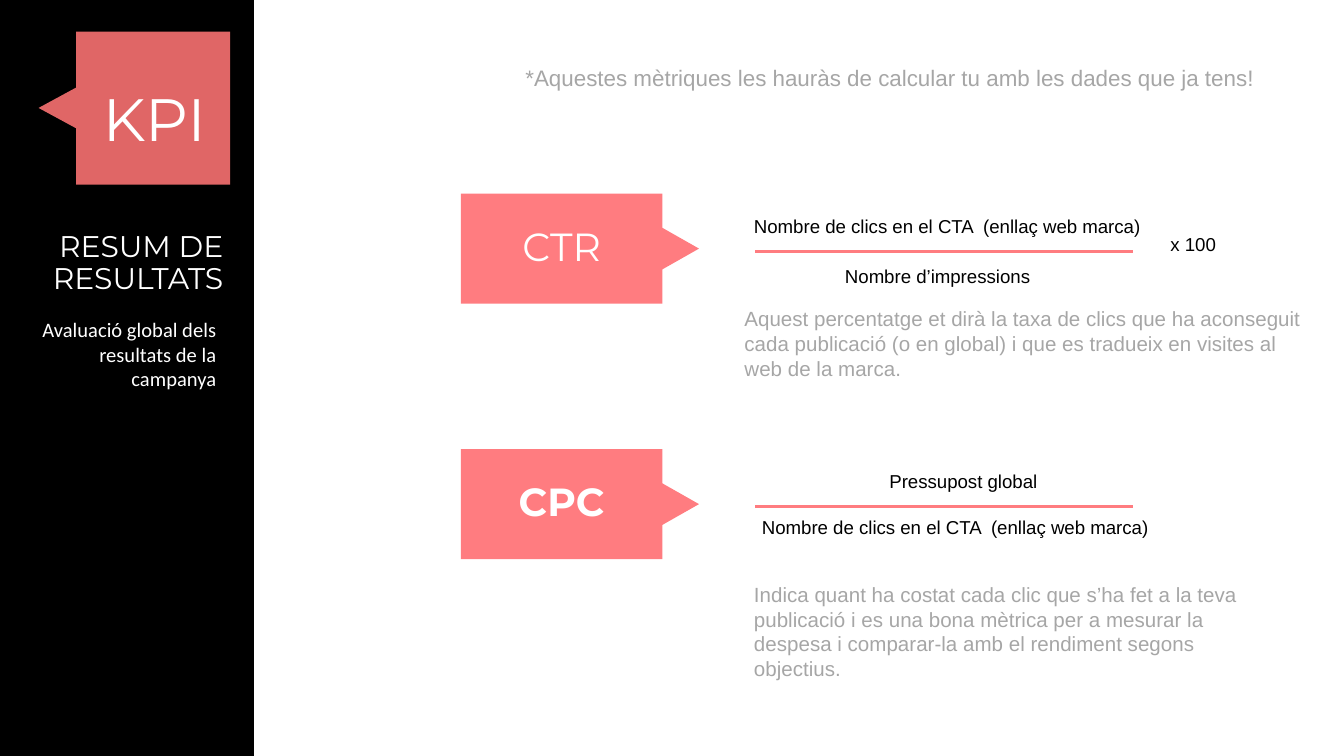
from lxml import etree
from pptx import Presentation
from pptx.dml.color import RGBColor
from pptx.enum.shapes import MSO_CONNECTOR, MSO_SHAPE
from pptx.enum.text import MSO_ANCHOR, MSO_AUTO_SIZE, PP_ALIGN
from pptx.oxml.ns import qn
from pptx.util import Cm, Pt

RECTANGLE = MSO_SHAPE.RECTANGLE
TRIANGLE = MSO_SHAPE.ISOSCELES_TRIANGLE
STRAIGHT = MSO_CONNECTOR.STRAIGHT
LEFT, CENTER, RIGHT = PP_ALIGN.LEFT, PP_ALIGN.CENTER, PP_ALIGN.RIGHT
TOP, MIDDLE, BOTTOM = MSO_ANCHOR.TOP, MSO_ANCHOR.MIDDLE, MSO_ANCHOR.BOTTOM
NO_AUTOFIT = MSO_AUTO_SIZE.NONE

BLACK = RGBColor(0x00, 0x00, 0x00)
WHITE = RGBColor(0xFF, 0xFF, 0xFF)
RED = RGBColor(0xE0, 0x66, 0x66)
CORAL = RGBColor(0xFF, 0x7C, 0x80)
GRAY = RGBColor(0xA6, 0xA6, 0xA6)

prs = Presentation()
prs.slide_width, prs.slide_height = Cm(25.4), Cm(14.29)
slide = prs.slides.add_slide(prs.slide_layouts[5])
shapes = slide.shapes


def add_block(kind, left, top, width, height, color, rotation=0):
    block = shapes.add_shape(kind, Cm(left), Cm(top), Cm(width), Cm(height))
    block.rotation = rotation
    block.fill.solid()
    block.fill.fore_color.rgb = color
    block.line.fill.background()
    block.shadow.inherit = False
    return block


def write(holder, text, size, color, font="Arial", align=LEFT, anchor=TOP,
          spacing=1.0, inset=0.13, wrap=True, bold=False):
    frame = holder.text_frame
    frame.text = text
    frame.word_wrap = wrap
    frame.auto_size = NO_AUTOFIT
    frame.vertical_anchor = anchor
    frame.margin_left = frame.margin_right = Cm(0.25)
    frame.margin_top = frame.margin_bottom = Cm(inset)
    paragraph = frame.paragraphs[0]
    paragraph.alignment = align
    paragraph.line_spacing = spacing
    style = paragraph.runs[0].font
    style.name, style.size, style.bold = font, Pt(size), bold
    style.color.rgb = color


add_block(RECTANGLE, 0, 0, 4.8, 14.29, BLACK)
add_block(RECTANGLE, 1.44, 0.6, 2.91, 2.89, RED)
add_block(TRIANGLE, 0.69, 1.57, 1.02, 0.94, RED, 270)

title = shapes.title
title.left, title.top, title.width, title.height = Cm(-0.13), Cm(3.56), Cm(4.6), Cm(2.29)
title.element.getparent().append(title.element)
write(title, "RESUM DE RESULTATS", 16, WHITE, "Montserrat", RIGHT, BOTTOM, 0.9, 0.25)

subtitle = shapes.add_textbox(Cm(0.28), Cm(5.74), Cm(4.06), Cm(1.5))
write(subtitle, "Avaluació global dels resultats de la campanya", 11, WHITE,
      "Calibri", RIGHT, inset=0.25)

kpi = shapes.add_textbox(Cm(0.69), Cm(0), Cm(4.45), Cm(4.62))
write(kpi, "KPI", 32, WHITE, "Montserrat", CENTER, MIDDLE, 0.9, 0.25)

for metric, top, bold in [("CTR", 3.66, False), ("CPC", 8.49, True)]:
    label = add_block(RECTANGLE, 8.71, top, 3.81, 2.08, CORAL)
    write(label, metric, 21, WHITE, "Montserrat", CENTER, MIDDLE, 0.9, 0.25, bold=bold)
    add_block(TRIANGLE, 12.42, top + 0.67, 0.84, 0.74, CORAL, 90)

    fraction_bar = shapes.add_connector(
        STRAIGHT, Cm(14.27), Cm(top + 1.09), Cm(21.41), Cm(top + 1.09))
    fraction_bar.line.color.rgb = CORAL
    fraction_bar.line.width = Pt(1.5)
    etree.SubElement(fraction_bar.element.spPr, qn("a:effectLst"))

CLICKS = "Nombre de clics en el CTA  (enllaç web marca)"
formula_parts = [
    (CLICKS, 14.0, 3.94, 8.41, LEFT),
    ("Nombre d’impressions", 15.72, 4.88, 4.11, LEFT),
    ("x 100", 21.87, 4.27, 1.75, LEFT),
    ("Pressupost global", 14.0, 8.76, 8.41, CENTER),
    (CLICKS, 14.15, 9.63, 8.41, LEFT),
]
for text, left, top, width, align in formula_parts:
    formula_part = shapes.add_textbox(Cm(left), Cm(top), Cm(width), Cm(0.69))
    write(formula_part, text, 10, BLACK, align=align)

explanations = [
    ("Aquest percentatge et dirà la taxa de clics que ha aconseguit cada publicació "
     "(o en global) i que es tradueix en visites al web de la marca.",
     13.82, 5.66, 11.3, 1.68),
    ("Indica quant ha costat cada clic que s’ha fet a la teva publicació i es una bona "
     "mètrica per a mesurar la despesa i comparar-la amb el rendiment segons objectius.",
     14.0, 10.87, 10.29, 2.13),
]
for text, left, top, width, height in explanations:
    explanation = shapes.add_textbox(Cm(left), Cm(top), Cm(width), Cm(height))
    write(explanation, text, 11, GRAY)

reminder = shapes.add_textbox(Cm(9.68), Cm(1.09), Cm(14.4), Cm(0.76))
write(reminder, "*Aquestes mètriques les hauràs de calcular tu amb les dades que ja tens!",
      12, GRAY, wrap=False)

prs.save("out.pptx")
